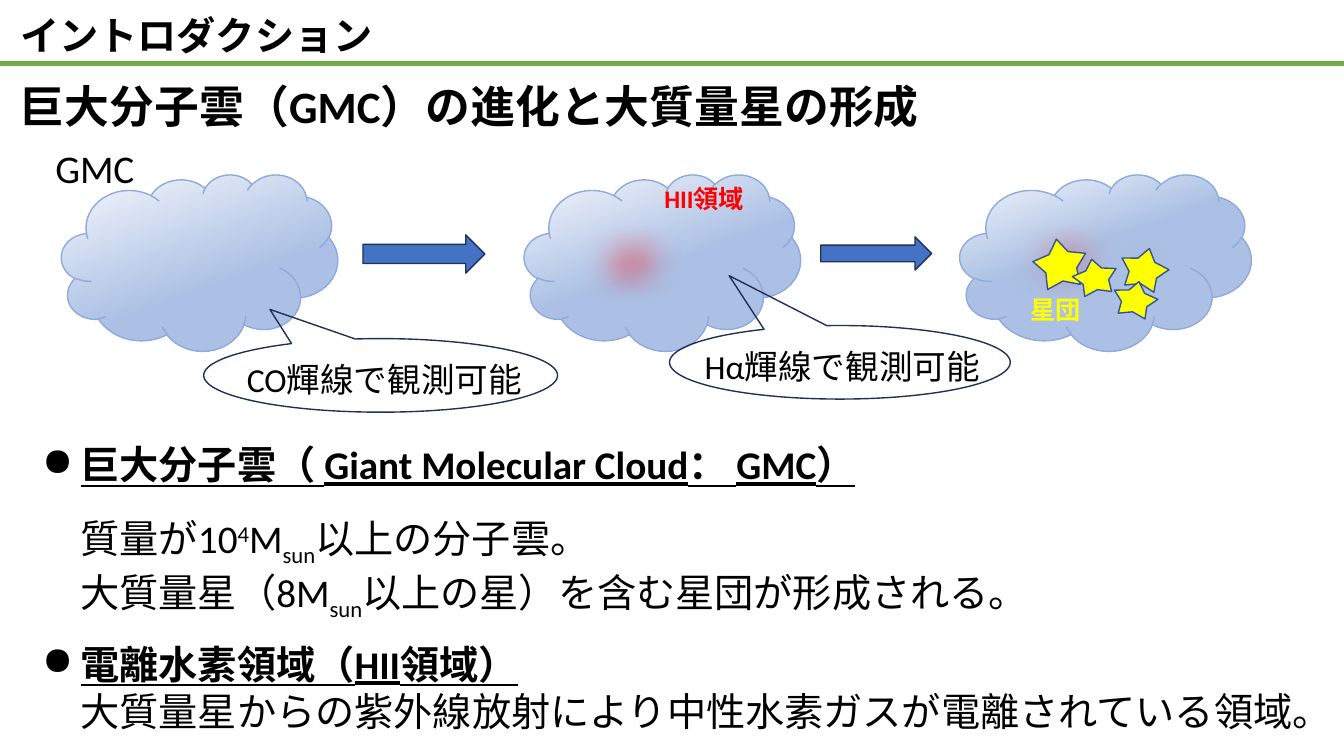
"""Build the slide on giant molecular clouds and massive star formation."""
import pptx
import pptx.dml.color
import pptx.enum.shapes
import pptx.enum.text
import pptx.oxml
import pptx.oxml.ns
import pptx.util
from pptx.util import Inches

COLORS = {
    "text": "000000", "rule": "70AD47", "arrow": "4472C4", "outline": "1E3256",
    "cloud_light": "F6F8FC", "cloud": "ABC0E4", "cloud_end": "C7D5ED",
    "cloud_line": "8FAADC", "red": "FF0000", "yellow": "FFFF00", "star_line": "2F5597",
}
FONT = "Calibri"
SOFT_EDGE = Inches(0.35)
HANGING = Inches(0.38)

TITLE = ("イントロダクション", (0.1, 0.06, 5.94, 0.57))
LABELS = [
    ("巨大分子雲（GMC）の進化と大質量星の形成", (0.1, 0.73, 9.43, 0.64), 32, True, "text"),
    ("GMC", (0.45, 1.38, 1.35, 0.57), 28, False, "text"),
    ("HII領域", (6.49, 1.77, 1.74, 0.55), 18, True, "red"),
    ("星団", (10.12, 2.87, 1.1, 0.55), 18, True, "yellow"),
    ("CO輝線で観測可能", (2.35, 3.51, 3.24, 0.5), 24, False, "text"),
    ("Hα輝線で観測可能", (6.89, 3.38, 3.58, 0.5), 24, False, "text"),
]
GMC_CLOUDS = [
    ((0.61, 1.73, 2.74, 1.75), 61),
    ((5.2, 1.73, 2.74, 1.75), 52),
    ((9.52, 1.73, 2.89, 1.75), 43),
]
HII_REGIONS = [
    (5.57, 2.07, 1.41, 1.12), (6.51, 2.14, 1.02, 1),
    (9.86, 2.07, 1.42, 1.07), (10.82, 2.11, 1.07, 1),
]
ARROWS = [(3.6, 2.33, 1.21, 0.38), (8.14, 2.35, 1.1, 0.33)]
STARS = [
    ((10.25, 2.37, 0.53, 0.48), 351), ((11.11, 2.46, 0.48, 0.41), 14),
    ((10.64, 2.57, 0.44, 0.35), 349.5), ((11.04, 2.79, 0.44, 0.35), 12.1),
]
CALLOUTS = [
    ((2.02, 3.36, 3.51, 0.73), (-0.313, -0.898)),
    ((6.64, 3.23, 3.38, 0.73), (-0.325, -1.178)),
]
SUPER, SUB = 30, -25
DEFINITIONS = [
    ((0.32, 4.09, 11.18, 1.99), [
        (True, 1.5, [("巨大分子雲（ Giant Molecular Cloud： GMC）", 0)]),
        (False, 1.5, [("質量が10", 0), ("4", SUPER), ("M", 0), ("sun", SUB),
                      ("以上の分子雲。", 0)]),
        (False, 1.0, [("大質量星（8M", 0), ("sun", SUB),
                      ("以上の星）を含む星団が形成される。", 0)]),
    ]),
    ((0.32, 6.3, 12.88, 1.04), [
        (True, 1.0, [("電離水素領域（HII領域）", 0)]),
        (False, 1.0, [("大質量星からの紫外線放射により中性水素ガスが電離されている領域。", 0)]),
    ]),
]


def rgb(name):
    return pptx.dml.color.RGBColor.from_string(COLORS[name])


def element(xml):
    return pptx.oxml.parse_xml(xml.replace(">", f" {pptx.oxml.ns.nsdecls('a')}>", 1))


def format_run(run, size, bold, color="text"):
    run.font.name = FONT
    run.font.size = pptx.util.Pt(size)
    run.font.bold = bold
    run.font.color.rgb = rgb(color)


def add_text_box(shapes, box):
    frame = shapes.add_textbox(*map(Inches, box)).text_frame
    frame.word_wrap = True
    return frame


def add_shape(shapes, kind, box, fill, line):
    shape = shapes.add_shape(kind, *map(Inches, box))
    shape.shadow.inherit = False
    if fill:
        shape.fill.solid()
        shape.fill.fore_color.rgb = rgb(fill)
    else:
        shape.fill.background()
    shape.line.color.rgb = rgb(line)
    shape.line.width = pptx.util.Pt(1)
    return shape


def add_gmc_cloud(shapes, box, middle):
    cloud = add_shape(shapes, pptx.enum.shapes.MSO_SHAPE.CLOUD, box, "cloud", "cloud_line")
    stops = [(0, "cloud_light"), (middle, "cloud"), (83, "cloud"), (100, "cloud_end")]
    stop_xml = "".join(
        f'<a:gs pos="{position * 1000}"><a:srgbClr val="{COLORS[name]}"/></a:gs>'
        for position, name in stops)
    gradient = element(f'<a:gradFill rotWithShape="1"><a:gsLst>{stop_xml}</a:gsLst>'
                       f'<a:lin ang="{70 * 60000}" scaled="0"/></a:gradFill>')
    properties = cloud._element.spPr
    properties.replace(properties.find(pptx.oxml.ns.qn("a:solidFill")), gradient)


def add_hii_region(shapes, box):
    region = add_shape(shapes, pptx.enum.shapes.MSO_SHAPE.CLOUD, box, "red", "red")
    effects = region._element.spPr.find(pptx.oxml.ns.qn("a:effectLst"))
    effects.append(element(f'<a:softEdge rad="{SOFT_EDGE}"></a:softEdge>'))


def add_definition(shapes, box, lines):
    frame = add_text_box(shapes, box)
    for index, (is_heading, spacing, pieces) in enumerate(lines):
        paragraph = frame.add_paragraph() if index else frame.paragraphs[0]
        paragraph.line_spacing = spacing
        properties = paragraph._p.get_or_add_pPr()
        properties.set("marL", str(HANGING))
        if is_heading:
            properties.set("indent", str(-HANGING))
            properties.append(element('<a:buChar char="●"></a:buChar>'))
        for words, baseline in pieces:
            run = paragraph.add_run()
            run.text = words
            format_run(run, 28, is_heading)
            run.font.underline = is_heading
            if baseline:
                run._r.get_or_add_rPr().set("baseline", str(baseline * 1000))


def add_title(slide):
    words, box = TITLE
    title = slide.shapes.title
    title.left, title.top, title.width, title.height = map(Inches, box)
    frame = title.text_frame
    frame.text = words
    frame.vertical_anchor = pptx.enum.text.MSO_ANCHOR.TOP
    frame.auto_size = pptx.enum.text.MSO_AUTO_SIZE.NONE
    paragraph = frame.paragraphs[0]
    paragraph.alignment = pptx.enum.text.PP_ALIGN.LEFT
    paragraph.line_spacing = 1.0
    paragraph.space_before = pptx.util.Pt(0)
    format_run(paragraph.runs[0], 28, True)


def main():
    presentation = pptx.Presentation()
    presentation.slide_width, presentation.slide_height = Inches(13.33), Inches(7.5)
    slide = presentation.slides.add_slide(presentation.slide_layouts[5])
    shapes = slide.shapes
    kinds = pptx.enum.shapes.MSO_SHAPE

    add_title(slide)
    rule = shapes.add_connector(pptx.enum.shapes.MSO_CONNECTOR.STRAIGHT,
                                0, Inches(0.63), Inches(13.33), Inches(0.63))
    rule.line.color.rgb = rgb("rule")
    rule.line.width = pptx.util.Pt(3)
    rule._element.spPr.append(element("<a:effectLst></a:effectLst>"))

    for box, lines in DEFINITIONS:
        add_definition(shapes, box, lines)
    for box, middle in GMC_CLOUDS:
        add_gmc_cloud(shapes, box, middle)
    for box in ARROWS:
        add_shape(shapes, kinds.RIGHT_ARROW, box, "arrow", "outline")
    for box in HII_REGIONS:
        add_hii_region(shapes, box)
    for box, angle in STARS:
        star = add_shape(shapes, kinds.STAR_5_POINT, box, "yellow", "star_line")
        star.adjustments[0] = 0.292
        star.rotation = angle
    for box, tip in CALLOUTS:
        callout = add_shape(shapes, kinds.OVAL_CALLOUT, box, None, "outline")
        callout.adjustments[0], callout.adjustments[1] = tip
    for words, box, size, bold, color in LABELS:
        frame = add_text_box(shapes, box)
        frame.text = words
        format_run(frame.paragraphs[0].runs[0], size, bold, color)

    presentation.save("out.pptx")


if __name__ == "__main__":
    main()
